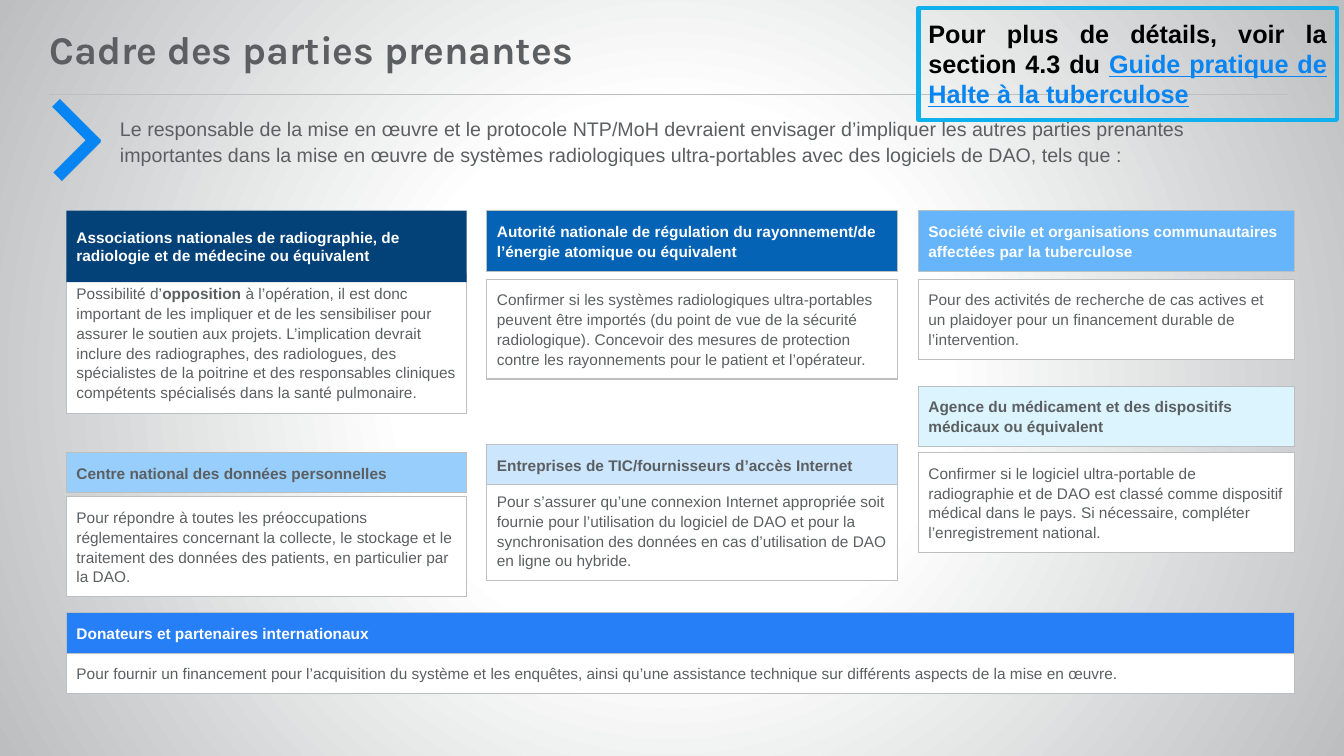
from lxml import etree
from pptx import Presentation
from pptx import util as u
from pptx.dml.color import RGBColor
from pptx.enum import shapes, text
from pptx.oxml import parse_xml
from pptx.oxml.ns import nsdecls, qn

# Colours
WHITE = RGBColor(0xFF, 0xFF, 0xFF)
BLACK = RGBColor(0x00, 0x00, 0x00)
GREY = RGBColor(0x5C, 0x5F, 0x61)
RULE = RGBColor(0xBC, 0xBE, 0xC0)
ACCENT = RGBColor(0x07, 0x85, 0xF2)
FRAME = RGBColor(0x0E, 0xB0, 0xED)
NAVY = RGBColor(0x03, 0x42, 0x79)
ROYAL = RGBColor(0x05, 0x63, 0xB5)
SKY = RGBColor(0x66, 0xB5, 0xFA)
ICE = RGBColor(0xDC, 0xF4, 0xFD)
LIGHT = RGBColor(0x97, 0xCE, 0xFC)
PALE = RGBColor(0xCB, 0xE6, 0xFD)
BRIGHT = RGBColor(0x27, 0x7F, 0xF8)

# Content
TITLE = "Cadre des parties prenantes"
INTRO = (
    "Le responsable de la mise en œuvre et le protocole NTP/MoH devraient envisager "
    "d’impliquer les autres parties prenantes importantes dans la mise en œuvre de systèmes "
    "radiologiques ultra-portables avec des logiciels de DAO, tels que :"
)
CALLOUT = ["Pour plus de détails, voir la section 4.3 du ",
           "Guide pratique de Halte à la tuberculose"]

# Column: left, width
LEFT, MIDDLE, RIGHT, FULL = (0.66, 3.97), (4.83, 4.07), (9.11, 3.73), (0.66, 12.18)

# Card: column, heading (top, height, fill, font colour, text), body (top, height, runs)
# In the body runs, every second run is bold.
CARDS = [
    (LEFT,
     (2.09, 0.71, NAVY, WHITE,
      "Associations nationales de radiographie, de radiologie et de médecine ou équivalent"),
     (2.71, 1.39, [
         "Possibilité d’", "opposition ",
         "à l’opération, il est donc important de les impliquer et de les sensibiliser pour "
         "assurer le soutien aux projets. L’implication devrait inclure des radiographes, des "
         "radiologues, des spécialistes de la poitrine et des responsables cliniques "
         "compétents spécialisés dans la santé pulmonaire."])),
    (MIDDLE,
     (2.09, 0.6, ROYAL, WHITE,
      "Autorité nationale de régulation du rayonnement/de l’énergie atomique ou équivalent"),
     (2.77, 0.99, [
         "Confirmer si les systèmes radiologiques ultra-portables peuvent être importés (du "
         "point de vue de la sécurité radiologique). Concevoir des mesures de protection "
         "contre les rayonnements pour le patient et l’opérateur."])),
    (RIGHT,
     (2.09, 0.6, SKY, WHITE,
      "Société civile et organisations communautaires affectées par la tuberculose"),
     (2.77, 0.8, [
         "Pour des activités de recherche de cas actives et un plaidoyer pour un financement "
         "durable de l’intervention."])),
    (LEFT,
     (4.49, 0.4, LIGHT, GREY, "Centre national des données personnelles"),
     (4.93, 0.99, [
         "Pour répondre à toutes les préoccupations réglementaires concernant la collecte, le "
         "stockage et le traitement des données des patients, en particulier par la DAO."])),
    (MIDDLE,
     (4.41, 0.4, PALE, GREY, "Entreprises de TIC/fournisseurs d’accès Internet"),
     (4.77, 0.99, [
         "Pour s’assurer qu’une connexion Internet appropriée soit fournie pour l’utilisation "
         "du logiciel de DAO et pour la synchronisation des données en cas d’utilisation de "
         "DAO en ligne ou hybride."])),
    (RIGHT,
     (3.83, 0.6, ICE, GREY, "Agence du médicament et des dispositifs médicaux ou équivalent"),
     (4.49, 0.99, [
         "Confirmer si le logiciel ultra-portable de radiographie et de DAO est classé comme "
         "dispositif médical dans le pays. Si nécessaire, compléter l’enregistrement "
         "national."])),
    (FULL,
     (6.08, 0.4, BRIGHT, WHITE, "Donateurs et partenaires internationaux"),
     (6.48, 0.4, [
         "Pour fournir un financement pour l’acquisition du système et les enquêtes, ainsi "
         "qu’une assistance technique sur différents aspects de la mise en œuvre."])),
]

# Chevron bars: left, top, width, height, rotation
CHEVRON = [(0.49, 1.5, 0.55, 0.12, 135), (0.47, 1.17, 0.58, 0.11, 225)]

presentation = Presentation()
presentation.slide_width, presentation.slide_height = u.Inches(13.33), u.Inches(7.5)
slide = presentation.slides.add_slide(presentation.slide_layouts[6])


def set_background():
    """Radial gradient, white in the centre and grey at the edges."""
    slide.background.fill.gradient()
    gradient = slide.element.find(".//" + qn("a:gradFill"))
    for child in list(gradient):
        gradient.remove(child)
    stops = "".join(f'<a:gs pos="{position}"><a:srgbClr val="{colour}"/></a:gs>'
                    for position, colour in ((0, WHITE), (35000, WHITE), (100000, RULE)))
    gradient.append(parse_xml(f'<a:gsLst {nsdecls("a")}>{stops}</a:gsLst>'))
    gradient.append(parse_xml(
        f'<a:path {nsdecls("a")} path="circle">'
        '<a:fillToRect l="50000" t="50000" r="50000" b="50000"/></a:path>'))


def add_rectangle(left, top, width, height, fill=None, line=None, line_width=0.75):
    shape = slide.shapes.add_shape(shapes.MSO_SHAPE.RECTANGLE,
                                   *map(u.Inches, (left, top, width, height)))
    shape.shadow.inherit = False
    if fill is None:
        shape.fill.background()
    else:
        shape.fill.solid()
        shape.fill.fore_color.rgb = fill
    if line is None:
        shape.line.fill.background()
    else:
        shape.line.color.rgb = line
        shape.line.width = u.Pt(line_width)
    return shape


def write(shape, runs, size, colour, bold=None, name="Arial", margins=(0.1, 0.1),
          spacing=None, anchor=text.MSO_ANCHOR.TOP, align=text.PP_ALIGN.LEFT):
    frame = shape.text_frame
    frame.word_wrap = True
    frame.vertical_anchor = anchor
    frame.margin_left = frame.margin_right = u.Inches(margins[0])
    frame.margin_top = frame.margin_bottom = u.Inches(margins[1])
    paragraph = frame.paragraphs[0]
    paragraph.alignment = align
    paragraph.line_spacing = spacing
    font = paragraph.font
    font.name, font.size, font.bold = name, u.Pt(size), bold
    font.color.rgb = colour
    for words in runs:
        paragraph.add_run().text = words
    return paragraph


def add_text(left, top, width, height, words, **style):
    box = slide.shapes.add_textbox(*map(u.Inches, (left, top, width, height)))
    write(box, [words], colour=GREY, margins=(0, 0.05), **style)


# Background, rule and chevron
set_background()
rule = slide.shapes.add_connector(shapes.MSO_CONNECTOR.STRAIGHT,
                                  *map(u.Inches, (0.49, 0.94, 12.77, 0.94)))
rule.line.color.rgb = RULE
rule.line.width = u.Pt(0.75)
etree.SubElement(rule.element.spPr, qn("a:effectLst"))
for *place, rotation in CHEVRON:
    add_rectangle(*place, fill=ACCENT).rotation = rotation

# Introduction and title
add_text(1.19, 1.09, 11.58, 0.8, INTRO, size=14, spacing=1.1)
add_text(0.49, 0.1, 11.88, 0.83, TITLE, size=28, bold=True, name="Karla", spacing=0.9,
         anchor=text.MSO_ANCHOR.MIDDLE)

# Stakeholder cards: the heading lies over the top edge of the body
for (left, width), (top, height, fill, colour, heading), (body_top, body_height, runs) in CARDS:
    body = add_rectangle(left, body_top, width, body_height, WHITE, RULE)
    paragraph = write(body, runs, 11, GREY, spacing=1.07)
    for run in paragraph.runs[1::2]:
        run.font.bold = True
    dark = fill == NAVY
    header = add_rectangle(left, top, width, height, fill, None if dark else RULE)
    write(header, [heading], 11, colour, True, spacing=None if dark else 1.07,
          anchor=text.MSO_ANCHOR.MIDDLE if dark else text.MSO_ANCHOR.TOP)

# Callout
callout = add_rectangle(9.11, 0.08, 4.15, 1.11, line=FRAME, line_width=3)
guide = write(callout, CALLOUT, 18, BLACK, True, align=text.PP_ALIGN.JUSTIFY).runs[1]
guide.font.color.rgb = ACCENT
guide.font.underline = True

presentation.save("out.pptx")
